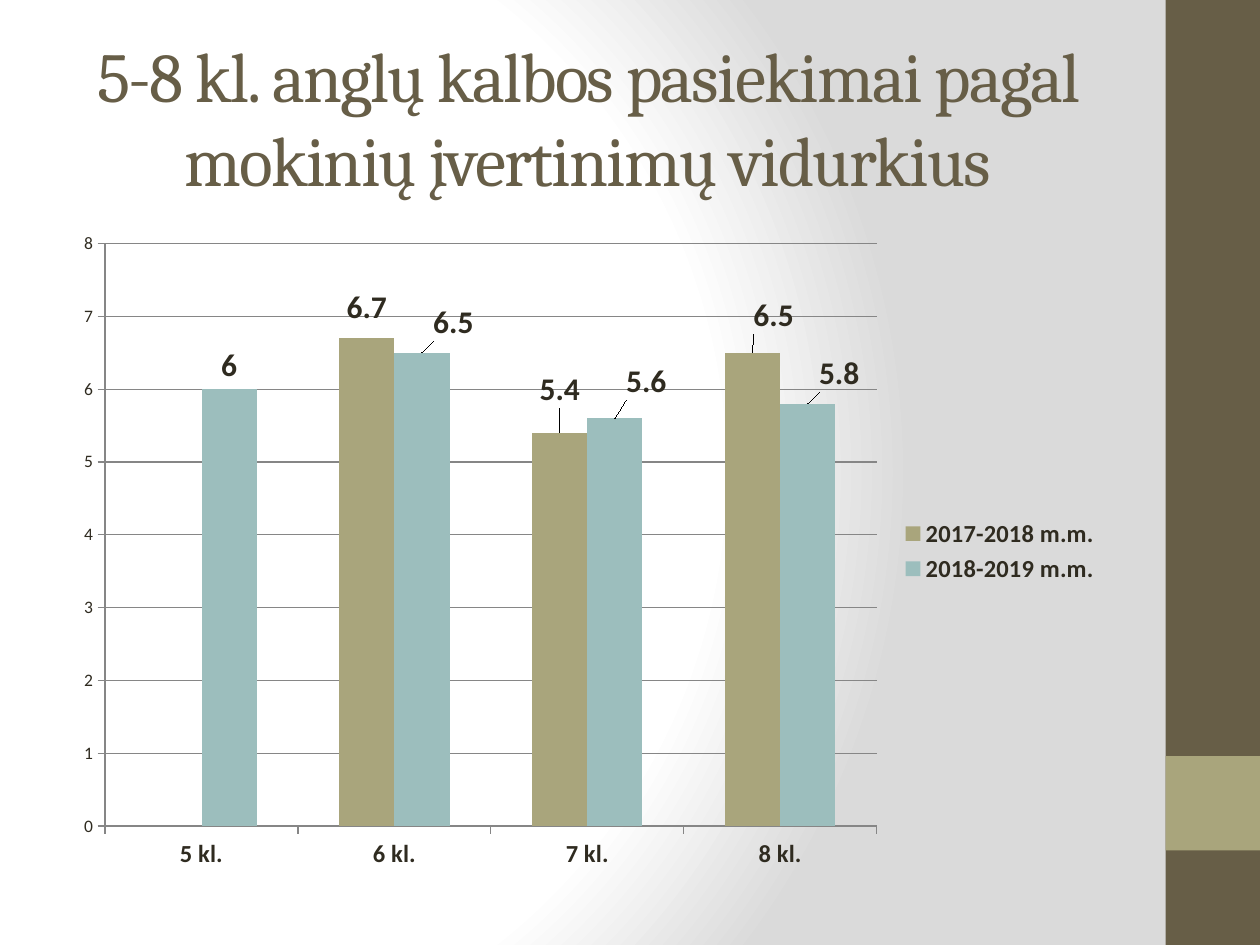
"""Build a slide comparing average English marks by class over two school years."""
from pptx import Presentation
from pptx.chart.data import CategoryChartData
from pptx.dml.color import RGBColor
from pptx.enum import chart as ce, shapes, text
from pptx.oxml import parse_xml
from pptx.oxml.ns import nsdecls
from pptx.util import Inches, Pt

TITLE = "5-8 kl. anglų kalbos pasiekimai pagal mokinių įvertinimų vidurkius"
CATS = ["5 kl.", "6 kl.", "7 kl.", "8 kl."]
SERIES = [
    ("2017-2018 m.m.", "A9A57C", [None, 6.7, 5.4, 6.5],
     {1: (0, -0.01), 2: (0, -0.03), 3: (0.02, -0.02)}),
    ("2018-2019 m.m.", "9CBEBD", [6, 6.5, 5.6, 5.8],
     {1: (0.03, -0.01), 2: (0.03, -0.02), 3: (0.03, -0.01)}),
]
BANDS = [(0, 7.5, "675E47"), (6, 0.75, "A9A57C")]
STOPS = [(0, "FFFFFF"), (75, "FFFFFF"), (100, "DADADA")]
INK, GRID = "2F2B20", "868686"


def rgb(code):
    return RGBColor.from_string(code)


def style(font, size, color=INK, bold=False, name="Calibri"):
    font.size, font.bold, font.name = Pt(size), bold, name
    font.color.rgb = rgb(color)


def backdrop(slide):
    stops = "".join(f'<a:gs pos="{pos * 1000}"><a:srgbClr val="{code}"/></a:gs>'
                    for pos, code in STOPS)
    slide.element.cSld.insert(0, parse_xml(
        f'<p:bg {nsdecls("p", "a")}><p:bgPr><a:gradFill rotWithShape="1">'
        f'<a:gsLst>{stops}</a:gsLst><a:path path="circle">'
        '<a:fillToRect l="20000" t="50000" r="100000" b="50000"/></a:path>'
        '</a:gradFill><a:effectLst/></p:bgPr></p:bg>'))


def band(slide, top, height, color):
    bar = slide.shapes.add_shape(shapes.MSO_SHAPE.RECTANGLE, Inches(9.25),
                                 Inches(top), Inches(0.75), Inches(height))
    bar.shadow.inherit = False
    bar.fill.solid()
    bar.fill.fore_color.rgb = rgb(color)
    bar.line.fill.background()


def title(slide):
    box = slide.shapes.add_textbox(Inches(0.5), Inches(0.3), Inches(8.33), Inches(1.25))
    frame = box.text_frame
    frame.word_wrap = True
    frame.vertical_anchor = text.MSO_ANCHOR.MIDDLE
    para = frame.paragraphs[0]
    para.alignment = text.PP_ALIGN.CENTER
    run = para.add_run()
    run.text = TITLE
    style(para.font, 40, "675E47", name="Cambria")
    run.font._element.set("spc", "-100")


def shift(series, idx, dx, dy):
    label = series.points[idx].data_label
    style(label.font, 18, bold=True)
    label.position = ce.XL_LABEL_POSITION.OUTSIDE_END
    node = series._element.xpath(f'c:dLbls/c:dLbl[c:idx/@val="{idx}"]')[0]
    node[0].addnext(parse_xml(
        f'<c:layout {nsdecls("c")}><c:manualLayout><c:x val="{dx}"/>'
        f'<c:y val="{dy}"/></c:manualLayout></c:layout>'))


def chart(slide):
    data = CategoryChartData()
    data.categories = CATS
    for name, _, vals, _ in SERIES:
        data.add_series(name, vals)
    graph = slide.shapes.add_chart(
        ce.XL_CHART_TYPE.COLUMN_CLUSTERED, Inches(0.5), Inches(1.75),
        Inches(8.33), Inches(5.25), data).chart
    style(graph.font, 10)
    graph.has_title = False
    graph.has_legend = True
    graph.legend.position = ce.XL_LEGEND_POSITION.RIGHT
    graph.legend.include_in_layout = False
    style(graph.legend.font, 14, bold=True)
    style(graph.category_axis.tick_labels.font, 14, bold=True)
    graph.value_axis.has_major_gridlines = True
    for axis in (graph.category_axis, graph.value_axis):
        axis.major_tick_mark = ce.XL_TICK_MARK.OUTSIDE
        axis.format.line.color.rgb = rgb(GRID)
    graph.value_axis.major_gridlines.format.line.color.rgb = rgb(GRID)
    plot = graph.plots[0]
    plot.gap_width, plot.overlap, plot.vary_by_categories = 150, 0, False
    for series, (_, color, _, moves) in zip(plot.series, SERIES):
        series.format.fill.solid()
        series.format.fill.fore_color.rgb = rgb(color)
        labels = series.data_labels
        labels.show_value = True
        labels.position = ce.XL_LABEL_POSITION.OUTSIDE_END
        style(labels.font, 18, bold=True)
        for idx, move in moves.items():
            shift(series, idx, *move)


def main():
    deck = Presentation()
    deck.slide_width, deck.slide_height = Inches(10), Inches(7.5)
    slide = deck.slides.add_slide(deck.slide_layouts[6])
    backdrop(slide)
    for spec in BANDS:
        band(slide, *spec)
    title(slide)
    chart(slide)
    deck.save("out.pptx")


if __name__ == "__main__":
    main()
